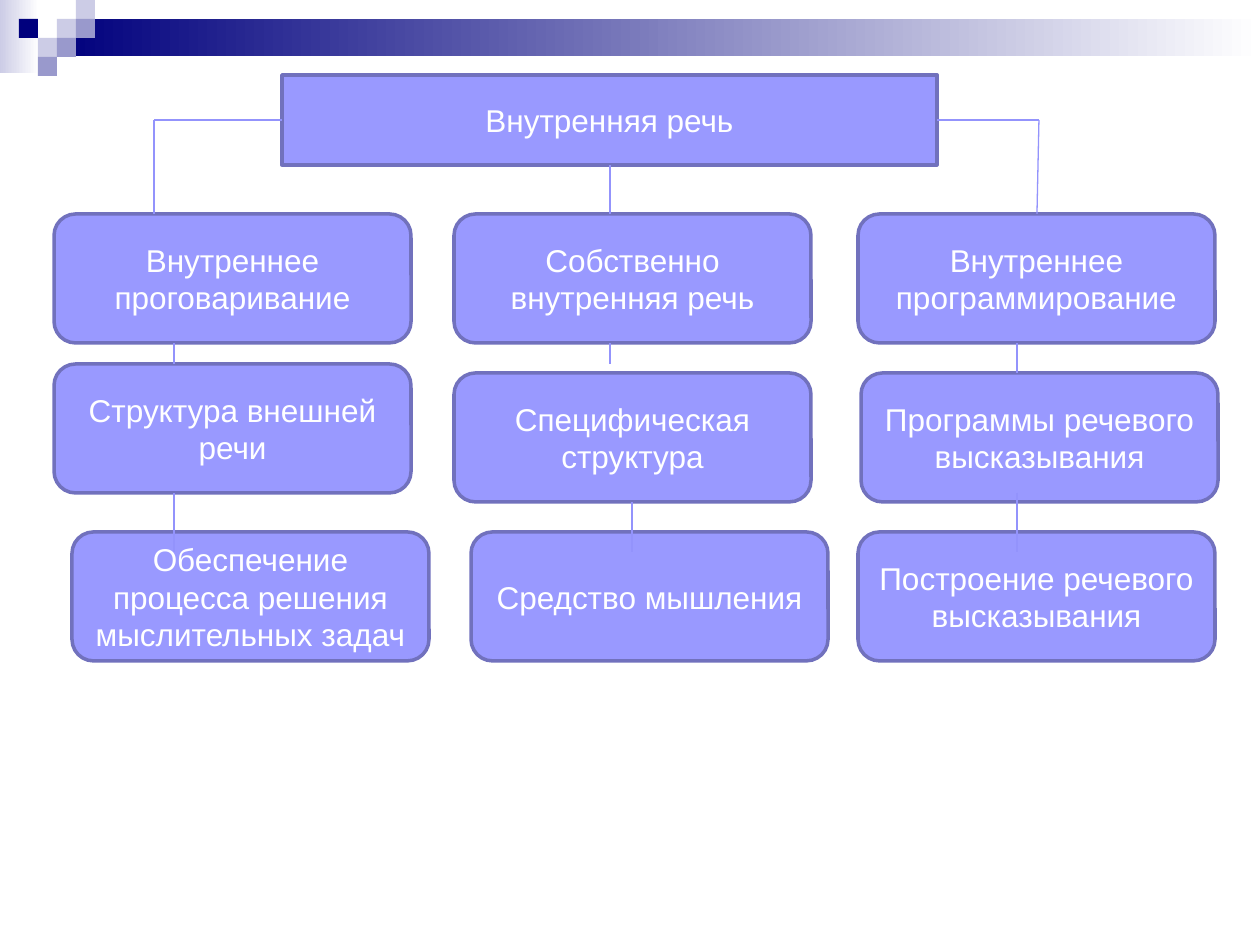
from pptx import Presentation
from pptx import util as u
from pptx.dml.color import RGBColor
from pptx.enum import shapes, text
from pptx.oxml.ns import qn
from lxml import etree

NAVY = RGBColor(0x00, 0x00, 0x7D)
PALE = RGBColor(0xCC, 0xCC, 0xE6)
LILAC = RGBColor(0x99, 0x99, 0xCC)
WHITE = RGBColor(0xFF, 0xFF, 0xFF)
BOX_FILL = RGBColor(0x99, 0x99, 0xFF)
BOX_LINE = RGBColor(0x71, 0x71, 0xBD)
LINK = RGBColor(0x93, 0x93, 0xFC)

RECT = shapes.MSO_SHAPE.RECTANGLE
ROUNDED = shapes.MSO_SHAPE.ROUNDED_RECTANGLE
EMU_PER_PX = 914400 / 126


def px(n):
    return u.Emu(round(n * EMU_PER_PX))


class Diagram:
    """Holds the text style and the slide being drawn on."""

    font, size = "Arial", u.Pt(18)

    def __init__(self, slide):
        self.slide = slide

    def shape(self, kind, x, y, w, h):
        sp = self.slide.shapes.add_shape(kind, px(x), px(y), px(w), px(h))
        sp.shadow.inherit = False
        return sp

    def square(self, x, y, side, color):
        sp = self.shape(RECT, x, y, side, side)
        sp.fill.solid()
        sp.fill.fore_color.rgb = color
        sp.line.fill.background()

    def fade(self, x, y, w, h, color):
        """Bar that fades from color to white, left to right."""
        sp = self.shape(RECT, x, y, w, h)
        sp.fill.gradient()
        sp.fill.gradient_angle = 0
        for stop, rgb, pos in zip(sp.fill.gradient_stops, (color, WHITE), (0, 1)):
            stop.color.rgb = rgb
            stop.position = pos
        sp.line.fill.background()

    def box(self, kind, x, y, w, h, label):
        sp = self.shape(kind, x, y, w, h)
        sp.fill.solid()
        sp.fill.fore_color.rgb = BOX_FILL
        sp.line.color.rgb = BOX_LINE
        sp.line.width = u.Pt(2)
        tf = sp.text_frame
        tf.word_wrap = True
        tf.vertical_anchor = text.MSO_ANCHOR.MIDDLE
        p = tf.paragraphs[0]
        p.alignment = text.PP_ALIGN.CENTER
        r = p.add_run()
        r.text = label
        r.font.name = self.font
        r.font.size = self.size
        r.font.color.rgb = WHITE

    def link(self, x1, y1, x2, y2):
        line = self.slide.shapes.add_connector(
            shapes.MSO_CONNECTOR.STRAIGHT, px(x1), px(y1), px(x2), px(y2))
        line.line.color.rgb = LINK
        line.line.width = u.Pt(0.75)
        etree.SubElement(line._element.spPr, qn("a:effectLst"))


def draw_header(d):
    d.fade(0, 0, 39, 73, PALE)
    d.fade(57, 19, 1203, 37, NAVY)
    side = 19
    for col, row, color in (
        (3, 1, PALE), (4, 0, PALE), (4, 1, LILAC), (2, 2, PALE),
        (1, 1, NAVY), (3, 2, LILAC), (2, 3, LILAC),
    ):
        d.square(col * side, row * side, side, color)


def draw_tree(d):
    d.box(RECT, 282, 75, 655, 90, "Внутренняя речь")
    box_w, box_h = 357, 129
    for x, y, label in (
        (54, 214, "Внутреннее проговаривание"),
        (858, 214, "Внутреннее программирование"),
        (454, 214, "Собственно внутренняя речь"),
        (54, 364, "Структура внешней речи"),
        (72, 532, "Обеспечение процесса решения мыслительных задач"),
        (454, 373, "Специфическая структура"),
        (471, 532, "Средство мышления"),
        (861, 373, "Программы речевого высказывания"),
        (858, 532, "Построение речевого высказывания"),
    ):
        d.box(ROUNDED, x, y, box_w, box_h, label)

    for ends in (
        (282, 120, 154, 120), (154, 120, 154, 214),
        (610, 165, 610, 214),
        (937, 120, 1039, 120), (1039, 120, 1037, 214),
    ):
        d.link(*ends)
    for x, top, bottom in (
        (174, 343, 364), (174, 493, 552),
        (610, 343, 364), (632, 502, 552),
        (1017, 343, 373), (1017, 493, 552),
    ):
        d.link(x, top, x, bottom)


def main():
    prs = Presentation()
    prs.slide_width, prs.slide_height = u.Inches(10), u.Inches(7.5)
    s = prs.slides.add_slide(prs.slide_layouts[6])
    d = Diagram(s)
    draw_header(d)
    draw_tree(d)
    prs.save("out.pptx")


if __name__ == "__main__":
    main()
